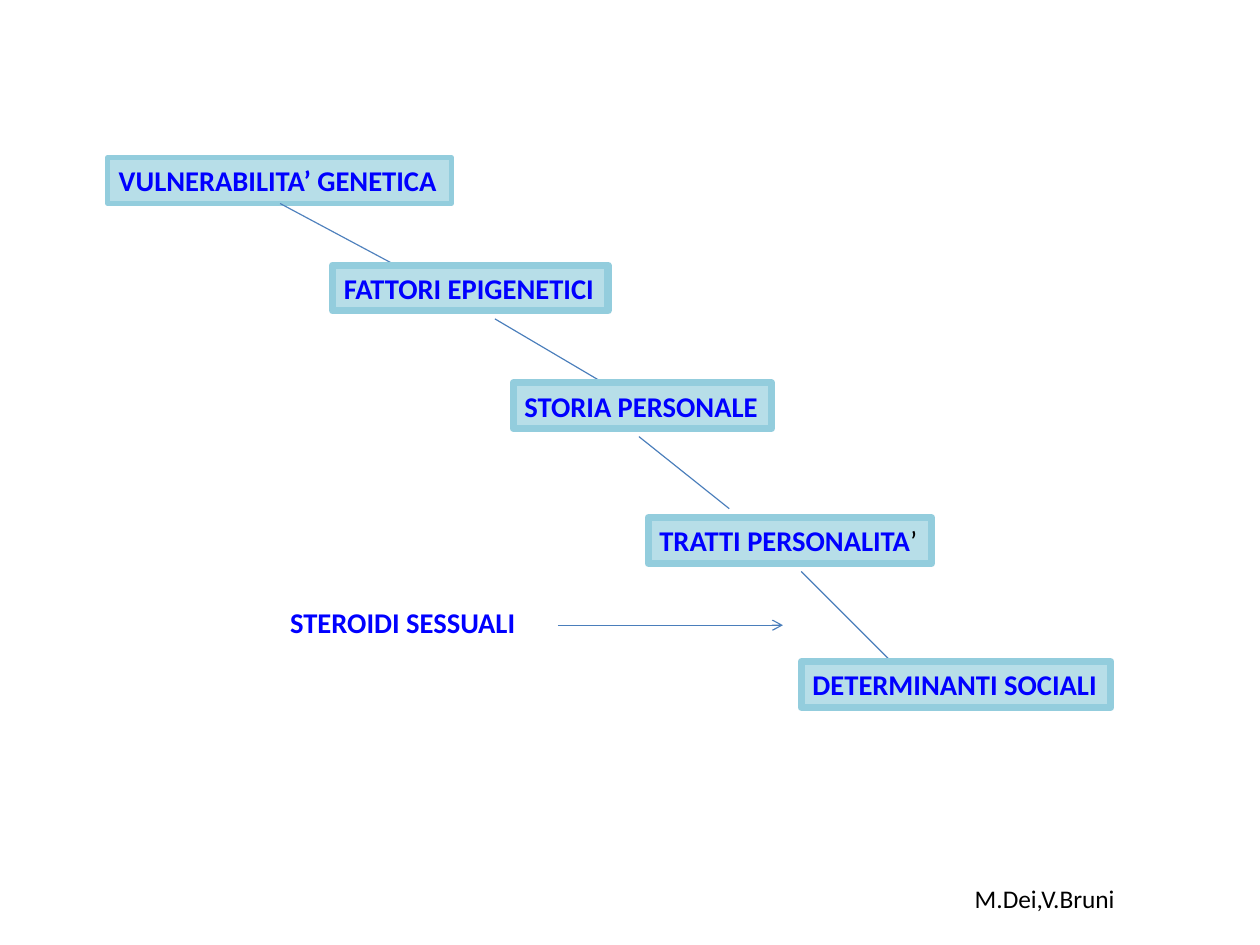
import dataclasses

import pptx
import pptx.dml.color
import pptx.enum.shapes
import pptx.enum.text
import pptx.oxml.ns
import pptx.util
from lxml import etree
from pptx.util import Inches


@dataclasses.dataclass(frozen=True)
class Theme:
    font: str = "Calibri"
    factor_size: int = 18
    credit_size: int = 16
    factor_text: str = "0000FF"
    plain_text: str = "000000"
    box_fill: str = "B7DEE8"
    box_border: str = "93CDDD"
    first_link: str = "4F81BD"
    link: str = "4A7EBB"
    link_width: float = 0.75


theme = Theme()
rgb = pptx.dml.color.RGBColor.from_string


def write(shape, pieces, size):
    """Fill a shape with one left-aligned line of (text, colour, bold) pieces."""
    frame = shape.text_frame
    frame.word_wrap = False
    frame.auto_size = pptx.enum.text.MSO_AUTO_SIZE.SHAPE_TO_FIT_TEXT
    frame.vertical_anchor = pptx.enum.text.MSO_ANCHOR.TOP
    line = frame.paragraphs[0]
    line.alignment = pptx.enum.text.PP_ALIGN.LEFT
    for text, color, bold in pieces:
        run = line.add_run()
        run.text = text
        run.font.name = theme.font
        run.font.size = pptx.util.Pt(size)
        run.font.bold = bold
        run.font.color.rgb = rgb(color)


def connect(start, end, color):
    link = slide.shapes.add_connector(
        pptx.enum.shapes.MSO_CONNECTOR.STRAIGHT,
        *(Inches(value) for value in (*start, *end)))
    link.line.color.rgb = rgb(color)
    link.line.width = pptx.util.Pt(theme.link_width)
    etree.SubElement(link.element.spPr, pptx.oxml.ns.qn("a:effectLst"))
    return link


# The page is 28 by 21 centimetres
deck = pptx.Presentation()
deck.slide_width = Inches(28 / 2.54)
deck.slide_height = Inches(21 / 2.54)
slide = deck.slides.add_slide(deck.slide_layouts[6])

# Each step of the staircase: text, left, top, width, border width
factors = [
    ("VULNERABILITA’ GENETICA", 0.94, 1.38, 3.01, 3),
    ("FATTORI EPIGENETICI", 2.91, 2.32, 2.41, 4.5),
    ("STORIA PERSONALE", 4.49, 3.35, 2.26, 4.5),
    ("TRATTI PERSONALITA", 5.67, 4.53, 2.48, 4.5),
    ("DETERMINANTI SOCIALI", 7.01, 5.79, 2.71, 4.5),
]
# The link that leads to each step, drawn beneath its box
links = [
    None,
    ((2.45, 1.78), (3.46, 2.32), theme.first_link),
    ((4.33, 2.79), (5.28, 3.35), theme.link),
    ((5.59, 3.82), (6.38, 4.45), theme.link),
    ((7.01, 5), (7.8, 5.79), theme.link),
]
for (factor, left, top, width, border), incoming in zip(factors, links):
    if incoming:
        connect(*incoming)
    box = slide.shapes.add_shape(
        pptx.enum.shapes.MSO_SHAPE.RECTANGLE,
        Inches(left), Inches(top), Inches(width), Inches(0.4))
    box.shadow.inherit = False
    box.fill.solid()
    box.fill.fore_color.rgb = rgb(theme.box_fill)
    box.line.color.rgb = rgb(theme.box_border)
    box.line.width = pptx.util.Pt(border)
    pieces = [(factor, theme.factor_text, True)]
    if factor == "TRATTI PERSONALITA":
        pieces.append(("’", theme.plain_text, False))
    write(box, pieces, theme.factor_size)

steroids = slide.shapes.add_textbox(
    Inches(2.44), Inches(5.24), Inches(2.19), Inches(0.4))
write(steroids, [("STEROIDI SESSUALI", theme.factor_text, True)], theme.factor_size)

influence = connect((4.88, 5.47), (6.85, 5.47), theme.link)
influence_line = influence.element.spPr.find(pptx.oxml.ns.qn("a:ln"))
etree.SubElement(influence_line, pptx.oxml.ns.qn("a:tailEnd"), type="arrow")

credit = slide.shapes.add_textbox(
    Inches(8.43), Inches(7.68), Inches(1.44), Inches(0.37))
write(credit, [("M.Dei,V.Bruni", theme.plain_text, False)], theme.credit_size)

deck.save("out.pptx")
